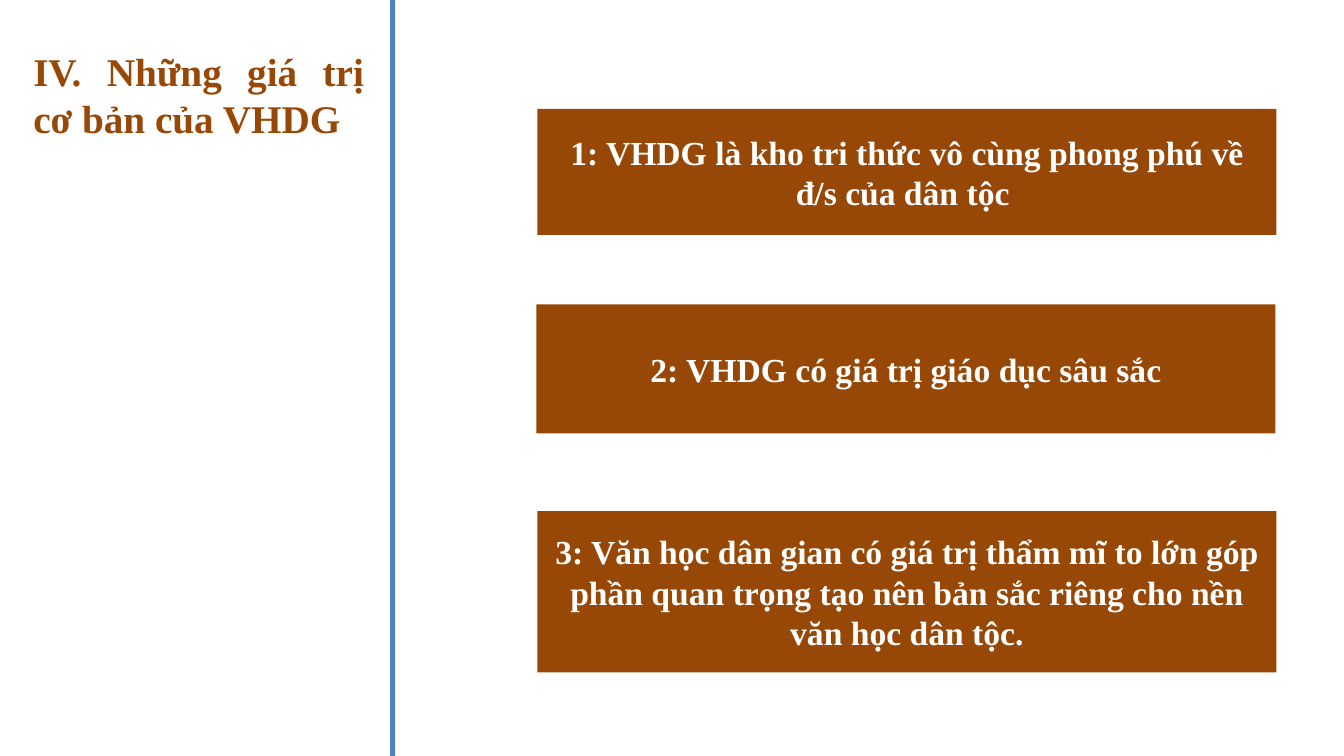
from pptx import Presentation
from pptx.dml.color import RGBColor
from pptx.enum.shapes import MSO_SHAPE as Shape
from pptx.enum.text import MSO_ANCHOR as Anchor, MSO_AUTO_SIZE as AutoSize, PP_ALIGN as Align
from pptx.util import Inches, Pt

HEADING = "IV. Những giá trị cơ bản của VHDG"
VALUES = [
    ("1: VHDG là kho tri thức vô cùng phong phú về đ/s của dân tộc ", 5.33, 1.08, 1.25),
    ("2: VHDG có giá trị giáo dục sâu sắc", 5.32, 3.02, 1.28),
    ("3: Văn học dân gian có giá trị thẩm mĩ to lớn góp phần quan trọng "
     "tạo nên bản sắc riêng cho nền văn học dân tộc.", 5.33, 5.07, 1.6),
]
VALUE_WIDTH = 7.33
SLIDE_WIDTH, SLIDE_HEIGHT = 13.33, 7.5
FONT = "Times New Roman"
BROWN = RGBColor(0x97, 0x48, 0x06)
BLUE = RGBColor(0x4F, 0x81, 0xBD)
WHITE = RGBColor(0xFF, 0xFF, 0xFF)


def write(holder, text, *, size, color, align, anchor):
    """Put bold text into a shape with the given format."""
    frame = holder.text_frame
    frame.word_wrap = True
    frame.auto_size = AutoSize.NONE
    frame.vertical_anchor = anchor
    paragraph = frame.paragraphs[0]
    paragraph.alignment = align
    paragraph.line_spacing = 1.0
    paragraph.space_before = Pt(0)
    run = paragraph.add_run()
    run.text = text
    run.font.name = FONT
    run.font.size = Pt(size)
    run.font.bold = True
    run.font.color.rgb = color


def add_block(slide, left, top, width, height, color):
    """Add a plain filled rectangle."""
    block = slide.shapes.add_shape(
        Shape.RECTANGLE, Inches(left), Inches(top), Inches(width), Inches(height))
    block.shadow.inherit = False
    block.fill.solid()
    block.fill.fore_color.rgb = color
    block.line.fill.background()
    return block


def main():
    """Build and save the slide."""
    deck = Presentation()
    deck.slide_width, deck.slide_height = Inches(SLIDE_WIDTH), Inches(SLIDE_HEIGHT)
    slide = deck.slides.add_slide(deck.slide_layouts[5])

    for text, left, top, height in VALUES:
        value = add_block(slide, left, top, VALUE_WIDTH, height, BROWN)
        write(value, text, size=24, color=WHITE, align=Align.CENTER, anchor=Anchor.MIDDLE)

    heading = slide.shapes.title
    heading.left, heading.top = Inches(0.23), Inches(0.42)
    heading.width, heading.height = Inches(3.48), Inches(1.04)
    write(heading, HEADING, size=28, color=BROWN, align=Align.JUSTIFY, anchor=Anchor.TOP)

    add_block(slide, 3.87, 0, 0.05, SLIDE_HEIGHT, BLUE)
    deck.save("out.pptx")


if __name__ == "__main__":
    main()
